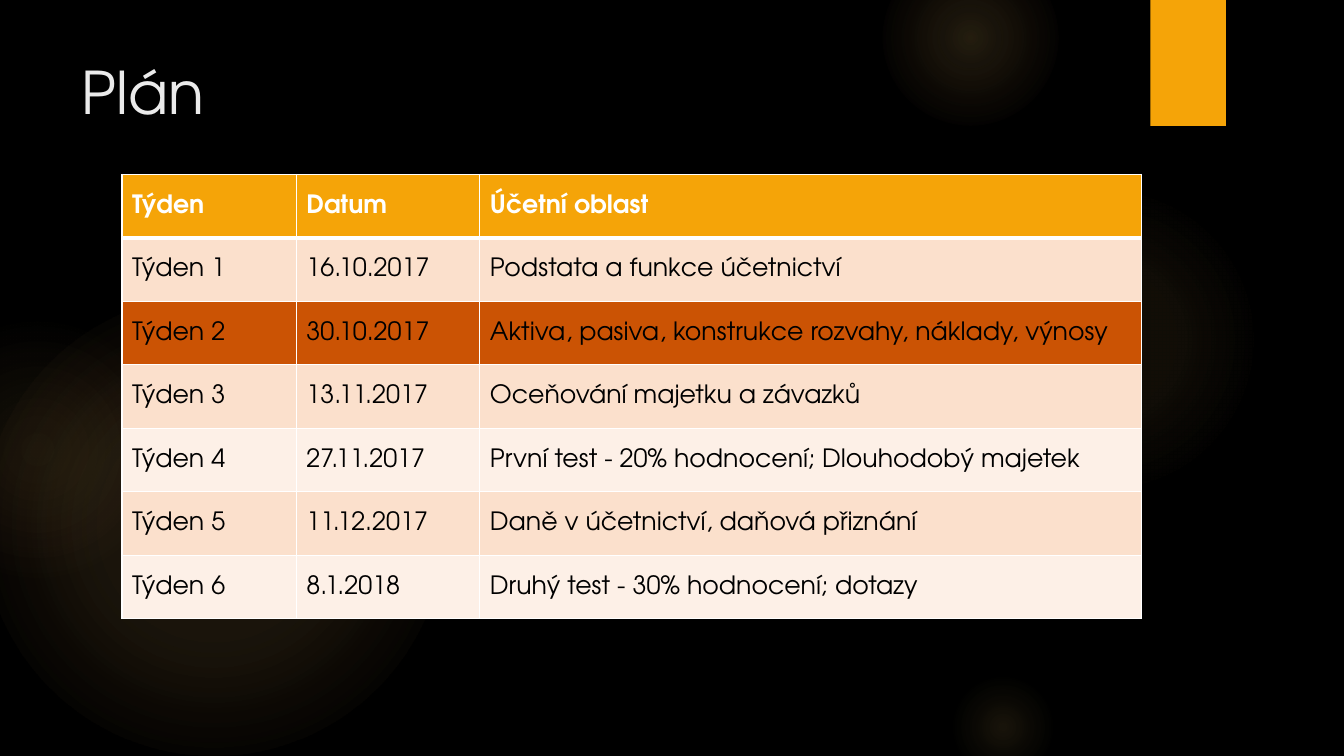
from pptx import Presentation
from pptx.dml.color import RGBColor
from pptx.enum.shapes import MSO_SHAPE
from pptx.enum.text import MSO_ANCHOR
from pptx.oxml import parse_xml
from pptx.oxml.ns import nsdecls, qn
from pptx.util import Inches, Pt

FONT = "TeX Gyre Adventor"
COLORS = {
    "background": "000000", "title": "EBEBEB", "accent": "F5A408",
    "glow": "FAC96A", "glow_edge": "F59B74", "white": "FFFFFF",
    "text": "000000", "odd": "FBE0CC", "even": "FDF0E7", "current": "CB5304",
}


def color(name):
    return RGBColor.from_string(COLORS[name])


def write(tf, text, size, name, bold=False):
    r = tf.paragraphs[0].add_run()
    r.text = text
    r.font.color.rgb = color(name)
    for attr, value in {"name": FONT, "size": Pt(size), "bold": bold}.items():
        setattr(r.font, attr, value)


prs = Presentation()
prs.slide_width, prs.slide_height = Inches(13.33), Inches(7.5)
s = prs.slides.add_slide(prs.slide_layouts[6])
s.background.fill.solid()
s.background.fill.fore_color.rgb = color("background")

# Soft glows: left, top, diameter, stops of (position %, opacity %), edge colour
glows = [
    (-0.17, 2.92, 4.58, [(0, 11), (36, 10), (75, 0)], "glow"),
    (-0.92, 3.17, 2.58, [(0, 8), (36, 5), (71, 0)], "glow_edge"),
    (9.41, 1.83, 3.08, [(0, 7), (36, 6), (69, 0)], "glow"),
    (8.75, -0.5, 1.75, [(0, 14), (36, 7), (73, 0)], "glow"),
    (9.41, 6.67, 1.08, [(0, 10), (31, 5), (66, 0)], "glow"),
]
for left, top, size, stops, edge in glows:
    sp = s.shapes.add_shape(MSO_SHAPE.OVAL, Inches(left), Inches(top), Inches(size), Inches(size))
    sp.shadow.inherit = False
    sp.line.fill.background()
    sp.fill.background()
    stop_xml = "".join(
        f'<a:gs pos="{pos * 1000}"><a:srgbClr val="{COLORS["glow" if alpha else edge]}">'
        f'<a:alpha val="{alpha * 1000}"/></a:srgbClr></a:gs>'
        for pos, alpha in stops)
    gradient = parse_xml(
        f'<a:gradFill {nsdecls("a")} rotWithShape="1"><a:gsLst>{stop_xml}</a:gsLst>'
        '<a:path path="circle"><a:fillToRect l="50000" t="50000" r="50000" b="50000"/></a:path>'
        '</a:gradFill>')
    spPr = sp.element.spPr
    spPr.replace(spPr.find(qn("a:noFill")), gradient)

# Accent tab
sp = s.shapes.add_shape(MSO_SHAPE.RECTANGLE, Inches(11.41), 0, Inches(0.75), Inches(1.25))
sp.shadow.inherit = False
sp.fill.solid()
sp.fill.fore_color.rgb = color("accent")
sp.line.fill.background()

# Title
sp = s.shapes.add_textbox(Inches(0.71), Inches(0.5), Inches(10.29), Inches(1.53))
sp.text_frame.word_wrap = True
write(sp.text_frame, "Plán", 42, "title")

# Timetable
rows = [
    ("Týden", "Datum", "Účetní oblast"),
    ("Týden 1", "16.10.2017", "Podstata a funkce účetnictví"),
    ("Týden 2", "30.10.2017", "Aktiva, pasiva, konstrukce rozvahy, náklady, výnosy"),
    ("Týden 3", "13.11.2017", "Oceňování majetku a závazků"),
    ("Týden 4", "27.11.2017", "První test - 20% hodnocení; Dlouhodobý majetek"),
    ("Týden 5", "11.12.2017", "Daně v účetnictví, daňová přiznání"),
    ("Týden 6", "8.1.2018", "Druhý test - 30% hodnocení; dotazy"),
]
current_week = 2
col_widths = [1.73, 1.82, 6.56]
row_height = 0.63
table = s.shapes.add_table(
    len(rows), len(col_widths), Inches(1.21), Inches(1.73),
    Inches(sum(col_widths)), Inches(row_height * len(rows))).table
for column, width in zip(table.columns, col_widths):
    column.width = Inches(width)

for week, row in enumerate(rows):
    table.rows[week].height = Inches(row_height)
    header = week == 0
    if header:
        fill = "accent"
    elif week == current_week:
        fill = "current"
    else:
        fill = "odd" if week % 2 else "even"
    # The rule under the header is thicker
    borders = {"lnL": 1, "lnR": 1, "lnT": 3 if week == 1 else 1, "lnB": 3 if header else 1}
    for col, text in enumerate(row):
        cell = table.cell(week, col)
        cell.vertical_anchor = MSO_ANCHOR.MIDDLE
        cell.fill.solid()
        cell.fill.fore_color.rgb = color(fill)
        write(cell.text_frame, text, 18, "white" if header else "text", header)
        tcPr = cell._tc.get_or_add_tcPr()
        for i, (tag, width) in enumerate(borders.items()):
            tcPr.insert(i, parse_xml(
                f'<a:{tag} {nsdecls("a")} w="{Pt(width)}"><a:solidFill>'
                f'<a:srgbClr val="{COLORS["white"]}"/></a:solidFill></a:{tag}>'))

prs.save("out.pptx")
